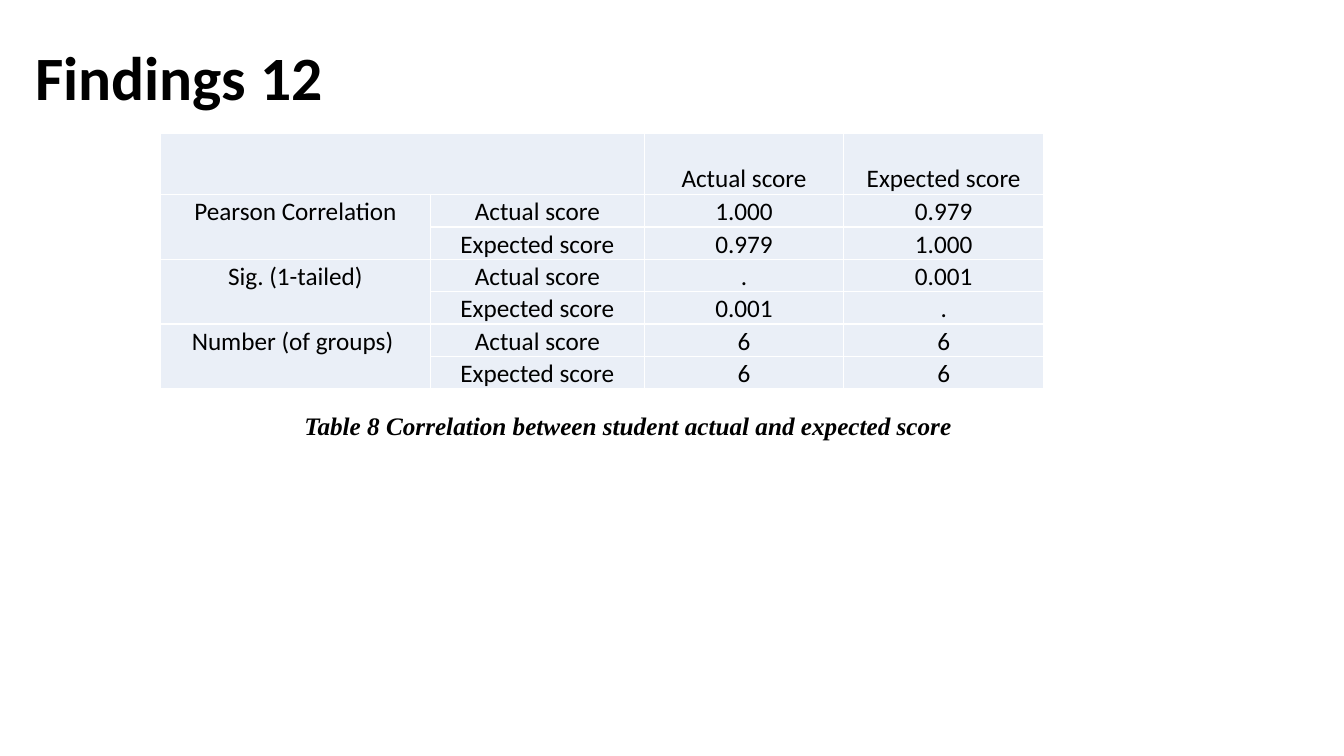
from lxml import etree
from pptx import Presentation, util as u
from pptx.dml.color import RGBColor
from pptx.enum import text as t
from pptx.oxml.ns import qn

HEADING = "Findings 12"
CAPTION = "Table 8 Correlation between student actual and expected score"
SCORES = ("Actual score", "Expected score")
STATISTICS = [
    ("Pearson Correlation", [("1.000", "0.979"), ("0.979", "1.000")]),
    ("Sig. (1-tailed)", [(".", "0.001"), ("0.001", ".")]),
    ("Number (of groups) ", [("6", "6"), ("6", "6")]),
]
COLORS = {"ink": "000000", "cell": "EAEFF7", "border": "FFFFFF"}
COLUMNS = (2.68, 2.12, 1.98, 1.98)
HEADER_ROW, BODY_ROW = 0.61, 0.32
TABLE_LEFT, TABLE_TOP = 1.59, 1.32
TOP, MIDDLE, BOTTOM = t.MSO_ANCHOR.TOP, t.MSO_ANCHOR.MIDDLE, t.MSO_ANCHOR.BOTTOM


def write(frame, words, size=18, font="Calibri", bold=False, italic=False,
          align=t.PP_ALIGN.CENTER, spacing=None, after=0):
    frame.word_wrap = True
    line = frame.paragraphs[0]
    line.alignment = align
    line.line_spacing = spacing
    line.space_after = u.Pt(after)
    line.font.size = u.Pt(size)
    if words:
        run = line.add_run()
        run.text = words
        run.font.name = font
        run.font.size = u.Pt(size)
        run.font.bold = bold
        run.font.italic = italic
        run.font.color.rgb = RGBColor.from_string(COLORS["ink"])


def paint(cell):
    cell.margin_left = cell.margin_right = cell.margin_top = cell.margin_bottom = 0
    properties = cell._tc.get_or_add_tcPr()
    for side in ("a:lnL", "a:lnR", "a:lnT", "a:lnB"):
        edge = etree.SubElement(properties, qn(side), w=str(u.Pt(1)))
        solid = etree.SubElement(edge, qn("a:solidFill"))
        etree.SubElement(solid, qn("a:srgbClr"), val=COLORS["border"])
    cell.fill.solid()
    cell.fill.fore_color.rgb = RGBColor.from_string(COLORS["cell"])


def add_text(slide, box, words, anchor=TOP, **style):
    frame = slide.shapes.add_textbox(*map(u.Inches, box)).text_frame
    frame.vertical_anchor = anchor
    write(frame, words, **style)


def add_correlations(slide):
    rows = [("", "", *SCORES)]
    for statistic, values in STATISTICS:
        for index, (score, pair) in enumerate(zip(SCORES, values)):
            rows.append(("" if index else statistic, score, *pair))
    heights = [HEADER_ROW] + [BODY_ROW] * (len(rows) - 1)
    box = (TABLE_LEFT, TABLE_TOP, sum(COLUMNS), sum(heights))
    table = slide.shapes.add_table(len(rows), len(COLUMNS), *map(u.Inches, box)).table
    table.first_row = table.horz_banding = False
    for column, width in zip(table.columns, COLUMNS):
        column.width = u.Inches(width)
    for r, (row, height) in enumerate(zip(rows, heights)):
        table.rows[r].height = u.Inches(height)
        for c, words in enumerate(row):
            cell = table.cell(r, c)
            paint(cell)
            cell.vertical_anchor = BOTTOM if r == 0 else MIDDLE if c > 1 else TOP
            write(cell.text_frame, words, spacing=1.07)
    table.cell(0, 0).merge(table.cell(0, 1))
    for r in range(1, len(rows), len(SCORES)):
        table.cell(r, 0).merge(table.cell(r + len(SCORES) - 1, 0))


def main():
    deck = Presentation()
    deck.slide_width, deck.slide_height = u.Inches(13.33), u.Inches(7.5)
    slide = deck.slides.add_slide(deck.slide_layouts[6])
    add_text(slide, (0.25, 0.28, 11.5, 1.04), HEADING, anchor=MIDDLE, size=44,
             bold=True, align=t.PP_ALIGN.LEFT, spacing=0.9)
    add_correlations(slide)
    add_text(slide, (2.54, 4.02, 7.38, 0.4), CAPTION, font="Times New Roman",
             bold=True, italic=True, after=10)
    deck.save("out.pptx")


if __name__ == "__main__":
    main()
